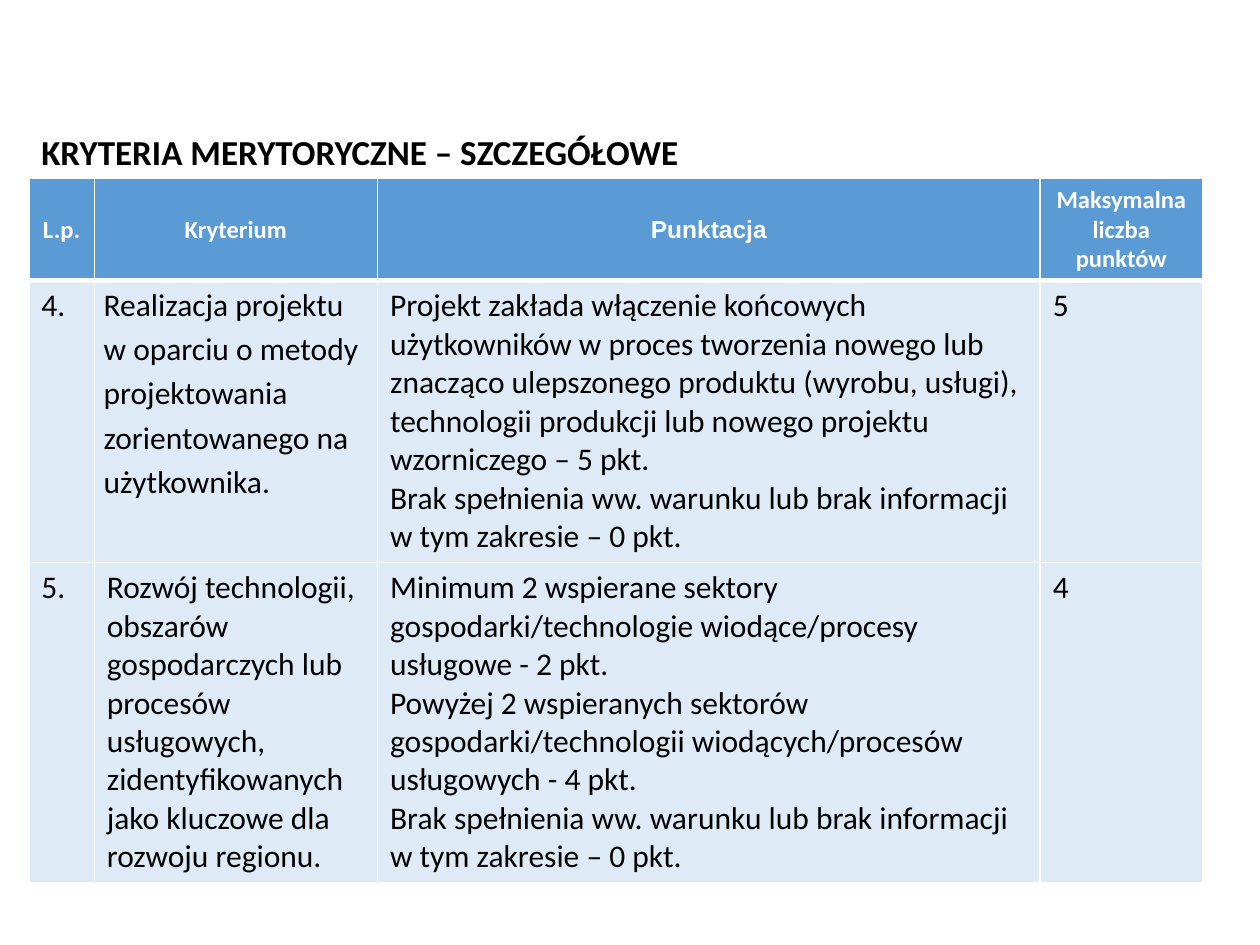
from lxml.etree import SubElement
from pptx import Presentation
from pptx.dml.color import RGBColor
from pptx.enum.text import MSO_ANCHOR, PP_ALIGN
from pptx.oxml.ns import qn
from pptx.util import Cm, Pt

COLORS = {"header": "5B9BD5", "body": "DEEBF7", "white": "FFFFFF", "black": "000000"}
LEFT = 0.58
COLUMN_WIDTHS = [1.32, 5.71, 13.36, 3.27]
ROW_HEIGHTS = [2.03, 5.66, 6.43]
NO_FULFILMENT = "Brak spełnienia ww. warunku lub brak informacji w tym zakresie – 0 pkt."
HEADERS = ["L.p.", "Kryterium", "Punktacja", "Maksymalna liczba punktów"]
CRITERIA = [
    [
        ["4."],
        ["Realizacja projektu w oparciu o metody projektowania zorientowanego na użytkownika."],
        [
            "Projekt zakłada włączenie końcowych użytkowników w proces tworzenia nowego lub "
            "znacząco ulepszonego produktu (wyrobu, usługi), technologii produkcji lub nowego "
            "projektu wzorniczego – 5 pkt.",
            NO_FULFILMENT,
        ],
        ["5"],
    ],
    [
        ["5."],
        [
            "Rozwój technologii, obszarów gospodarczych lub procesów usługowych, "
            "zidentyfikowanych jako kluczowe dla rozwoju regionu."
        ],
        [
            "Minimum 2 wspierane sektory gospodarki/technologie wiodące/procesy usługowe - 2 pkt.",
            "Powyżej 2 wspieranych sektorów gospodarki/technologii wiodących/procesów "
            "usługowych - 4 pkt.",
            NO_FULFILMENT,
        ],
        ["4"],
    ],
]


def color(name):
    return RGBColor.from_string(COLORS[name])


def add_run(para, text, size, color_name, bold=False, font="Calibri"):
    span = para.add_run()
    span.text = text
    span.font.name = font
    span.font.size = Pt(size)
    span.font.bold = bold
    span.font.color.rgb = color(color_name)


def set_borders(cell, top=1, bottom=1):
    properties = cell._tc.get_or_add_tcPr()
    for side, width in {"L": 1, "R": 1, "T": top, "B": bottom}.items():
        line = SubElement(properties, qn(f"a:ln{side}"), w=str(Pt(width)))
        fill = SubElement(line, qn("a:solidFill"))
        SubElement(fill, qn("a:srgbClr"), val=COLORS["white"])


def fill_cell(cell, fill_name):
    cell.fill.solid()
    cell.fill.fore_color.rgb = color(fill_name)


def add_title(slide):
    title = slide.shapes.title
    title.left, title.top, title.width, title.height = Cm(LEFT), Cm(2.49), Cm(13.77), Cm(1.11)
    frame = title.text_frame
    frame.vertical_anchor = MSO_ANCHOR.MIDDLE
    para = frame.paragraphs[0]
    para.alignment = PP_ALIGN.LEFT
    add_run(para, "KRYTERIA MERYTORYCZNE – SZCZEGÓŁOWE", 20, "black", bold=True)


def write_header(cell, text):
    set_borders(cell, bottom=3)
    fill_cell(cell, "header")
    cell.vertical_anchor = MSO_ANCHOR.MIDDLE
    para = cell.text_frame.paragraphs[0]
    para.alignment = PP_ALIGN.CENTER
    font = "Arial" if text == "Punktacja" else "Calibri"
    add_run(para, text, 14, "white", bold=True, font=font)


def write_body(cell, texts, top_border):
    set_borders(cell, top=top_border)
    fill_cell(cell, "body")
    frame = cell.text_frame
    for index, text in enumerate(texts):
        para = frame.add_paragraph() if index else frame.paragraphs[0]
        add_run(para, text, 18, "black")


def loosen(cell):
    cell.margin_left = cell.margin_right = Cm(0.19)
    cell.margin_top = cell.margin_bottom = 0
    for para in cell.text_frame.paragraphs:
        para.line_spacing = 1.15


def add_criteria_table(slide):
    table = slide.shapes.add_table(
        len(ROW_HEIGHTS), len(COLUMN_WIDTHS), Cm(LEFT), Cm(3.6),
        Cm(sum(COLUMN_WIDTHS)), Cm(sum(ROW_HEIGHTS)),
    ).table
    for column, width in zip(table.columns, COLUMN_WIDTHS):
        column.width = Cm(width)
    for row, height in zip(table.rows, ROW_HEIGHTS):
        row.height = Cm(height)
    for column_index, text in enumerate(HEADERS):
        write_header(table.cell(0, column_index), text)
    for row_index, criterion in enumerate(CRITERIA, start=1):
        for column_index, texts in enumerate(criterion):
            top_border = 3 if row_index == 1 else 1
            write_body(table.cell(row_index, column_index), texts, top_border)
    loosen(table.cell(1, 1))


def main():
    deck = Presentation()
    deck.slide_width, deck.slide_height = Cm(25.4), Cm(19.05)
    page = deck.slides.add_slide(deck.slide_layouts[5])
    add_criteria_table(page)
    add_title(page)
    deck.save("out.pptx")


if __name__ == "__main__":
    main()
